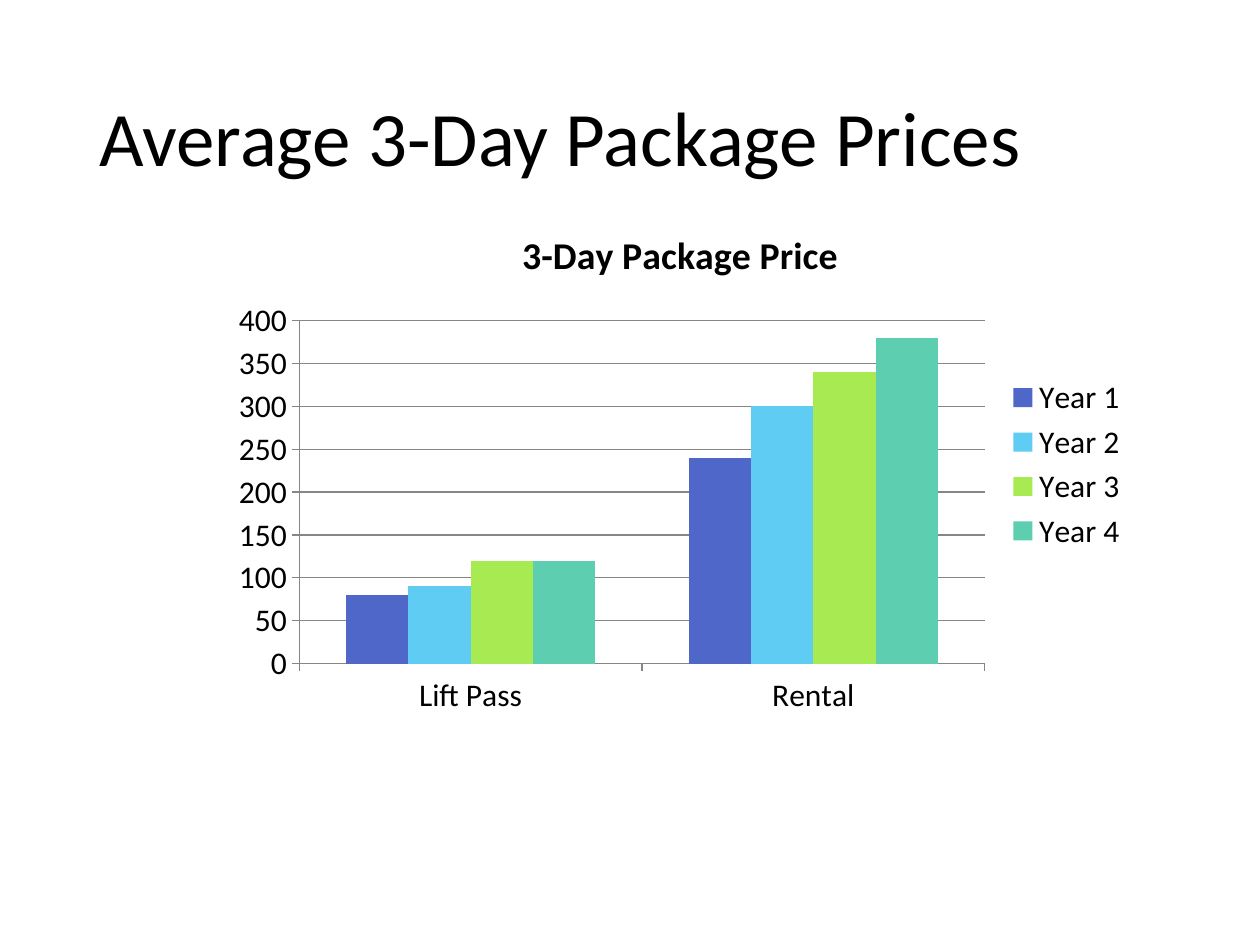
from pptx import Presentation
from pptx.chart.data import CategoryChartData
from pptx.dml.color import RGBColor
from pptx.enum.chart import XL_CHART_TYPE, XL_LEGEND_POSITION, XL_TICK_MARK
from pptx.enum.text import MSO_ANCHOR
from pptx.util import Inches, Pt

COLUMNS = XL_CHART_TYPE.COLUMN_CLUSTERED
RIGHT = XL_LEGEND_POSITION.RIGHT
OUTSIDE = XL_TICK_MARK.OUTSIDE
MIDDLE = MSO_ANCHOR.MIDDLE

FACE = "Calibri"
BLACK = RGBColor(0x00, 0x00, 0x00)
GRAY = RGBColor(0x86, 0x86, 0x86)
BLUE = RGBColor(0x4E, 0x67, 0xC8)
SKY = RGBColor(0x5E, 0xCC, 0xF3)
LIME = RGBColor(0xA7, 0xEA, 0x52)
TEAL = RGBColor(0x5D, 0xCE, 0xAF)

ITEMS = ["Lift Pass", "Rental"]
YEARS = [
    ("Year 1", (80, 240), BLUE),
    ("Year 2", (90, 300), SKY),
    ("Year 3", (120, 340), LIME),
    ("Year 4", (120, 380), TEAL),
]


def set_font(font, size):
    """Set the common face and colour at the given size."""
    font.name = FACE
    font.size = Pt(size)
    font.color.rgb = BLACK


def add_title(slide, box, text):
    """Place the slide title in the box."""
    frame = slide.shapes.add_textbox(*box).text_frame
    frame.word_wrap = True
    frame.vertical_anchor = MIDDLE
    line = frame.paragraphs[0]
    line.text = text
    line.line_spacing = 0.9
    set_font(line.font, 44)


def add_prices(slide, box, text):
    """Place the column chart of prices by year in the box."""
    data = CategoryChartData()
    data.categories = ITEMS
    for name, prices, _ in YEARS:
        data.add_series(name, prices)
    chart = slide.shapes.add_chart(COLUMNS, *box, data).chart
    set_font(chart.font, 18)

    chart.has_title = True
    head = chart.chart_title.text_frame.paragraphs[0]
    head.text = text
    set_font(head.font, 21.6)
    head.font.bold = True
    chart.chart_title.include_in_layout = False

    chart.has_legend = True
    chart.legend.position = RIGHT
    chart.legend.include_in_layout = False

    plot = chart.plots[0]
    plot.gap_width = 150
    plot.overlap = 0
    plot.vary_by_categories = False
    for series, (_, _, color) in zip(plot.series, YEARS):
        series.format.fill.solid()
        series.format.fill.fore_color.rgb = color

    scale = chart.value_axis
    scale.minimum_scale, scale.maximum_scale = 0, 400
    scale.major_unit = 50
    scale.has_major_gridlines = True
    for axis in (chart.category_axis, scale):
        axis.major_tick_mark = OUTSIDE
    for part in (chart.category_axis, scale, scale.major_gridlines):
        part.format.line.color.rgb = GRAY


def main():
    """Build and save the slide."""
    deck = Presentation()
    deck.slide_width, deck.slide_height = Inches(10), Inches(7.5)
    slide = deck.slides.add_slide(deck.slide_layouts[6])
    add_title(slide, [Inches(n) for n in (0.69, 0.4, 8.62, 1.45)],
              "Average 3-Day Package Prices")
    add_prices(slide, [Inches(n) for n in (1.75, 1.62, 7.3, 4.13)],
               "3-Day Package Price")
    deck.save("out.pptx")


if __name__ == "__main__":
    main()
